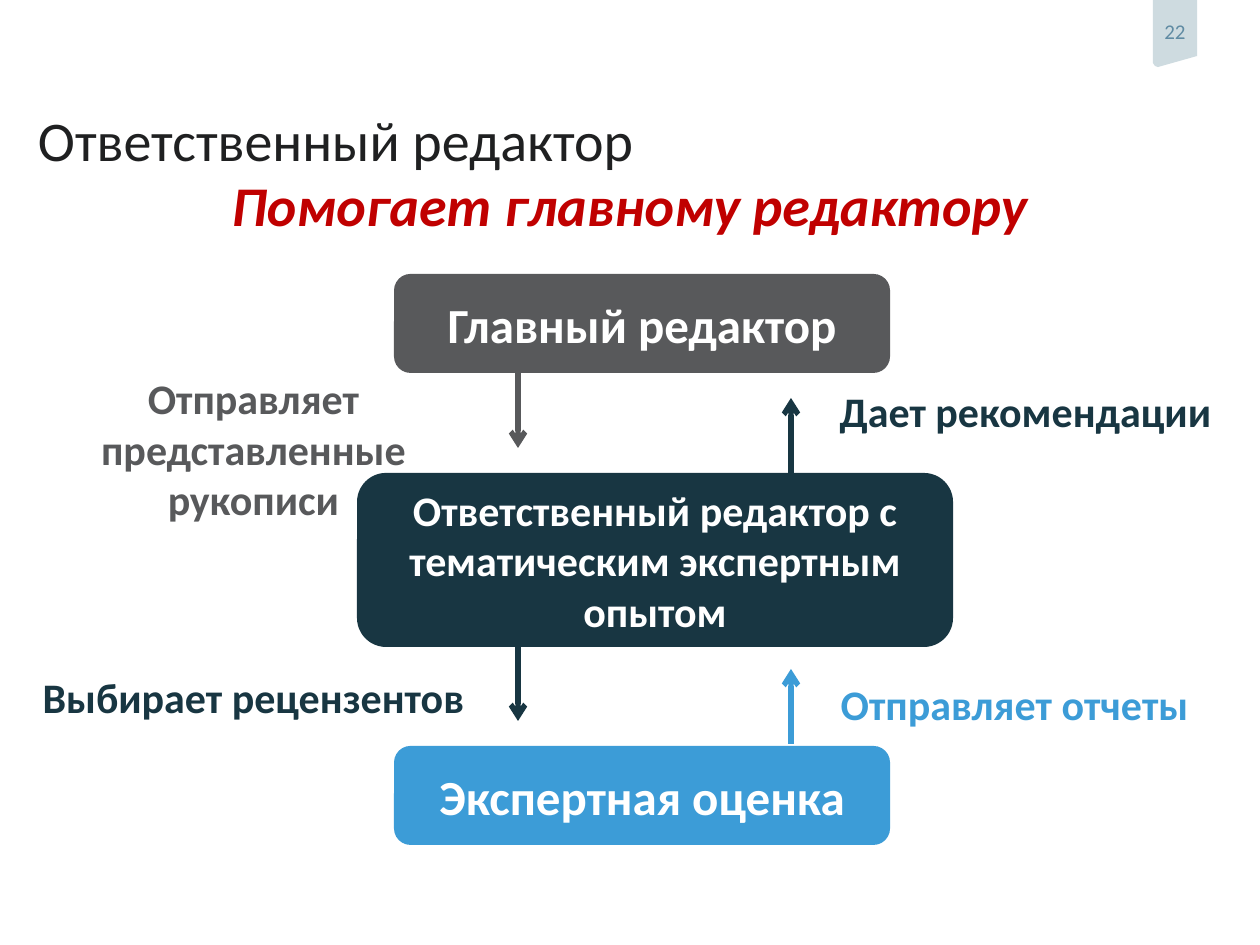
from lxml import etree
from pptx import Presentation
from pptx import util as u
from pptx.dml.color import RGBColor
from pptx.enum import shapes, text
from pptx.oxml.ns import qn

SCALE = 914400 / 126
GREY, NAVY, BLUE = "58595B", "183642", "3C9CD7"


def px(n):
    return u.Emu(round(n * SCALE))


def tint(color, code):
    color.rgb = RGBColor.from_string(code)


def write(shape, words, size, code, bold=True, center=True, middle=False, pad=0):
    frame = shape.text_frame
    frame.text = words
    frame.word_wrap = True
    frame.auto_size = text.MSO_AUTO_SIZE.NONE
    frame.vertical_anchor = text.MSO_ANCHOR.MIDDLE if middle else text.MSO_ANCHOR.TOP
    frame.margin_left = frame.margin_right = px(pad)
    frame.margin_top = frame.margin_bottom = px(pad // 2)
    par = frame.paragraphs[0]
    par.alignment = text.PP_ALIGN.CENTER if center else text.PP_ALIGN.LEFT
    font = par.runs[0].font
    font.name, font.size, font.bold = "Calibri", u.Pt(size), bold
    tint(font.color, code)
    return par


def paint(shape, code):
    shape.shadow.inherit = False
    shape.fill.solid()
    tint(shape.fill.fore_color, code)
    shape.line.fill.background()


def label(slide, words, code, x, y, w, h=74, size=24):
    box = slide.shapes.add_textbox(px(x), px(y), px(w), px(h))
    return write(box, words, size, code)


def node(slide, words, code, x, y, w, h, size):
    box = slide.shapes.add_shape(
        shapes.MSO_SHAPE.ROUNDED_RECTANGLE, px(x), px(y), px(w), px(h))
    paint(box, code)
    write(box, words, size, "FFFFFF", middle=True, pad=12)


def arrow(slide, code, x, start, end):
    line = slide.shapes.add_connector(
        shapes.MSO_CONNECTOR.STRAIGHT, px(x), px(start), px(x), px(end))
    line.line.width = u.Pt(3)
    tint(line.line.color, code)
    etree.SubElement(line.line._get_or_add_ln(), qn("a:tailEnd"), type="arrow")
    etree.SubElement(line._element.spPr, qn("a:effectLst"))


def badge(slide, x, y, w, h):
    """Page number on a ribbon with a slanted lower edge."""
    pen = slide.shapes.build_freeform(x, y, scale=SCALE)
    pen.add_line_segments([(x + w, y), (x + w, y + h - 11), (x + 5, y + h),
                           (x + 2, y + h - 1), (x, y + h - 4)])
    tag = pen.convert_to_shape()
    paint(tag, "CEDBE0")
    write(tag, "22", 12, "608BA3", bold=False, middle=True)
    tag.text_frame.margin_bottom = px(5)
    tag.text_frame.word_wrap = False


def heading(slide, x, y, w):
    title = slide.shapes.title
    title.left, title.top, title.width, title.height = px(x), px(y), px(w), px(60)
    write(title, "Ответственный редактор", 32, "1F2021", bold=False, center=False)
    par = label(slide, "Помогает главному редактору", "C00000", 0, y + 94, 1260, 87, 32)
    par.line_spacing = u.Pt(22)
    par.runs[0].font.italic = True


def flow(slide, x, y):
    """Three roles stacked, with arrows down on the left and up on the right."""
    node(slide, "Главный редактор", GREY, x + 356, y, 496, 99, 28)
    node(slide, "Ответственный редактор с тематическим экспертным опытом",
         NAVY, x + 319, y + 199, 596, 174, 24)
    node(slide, "Экспертная оценка", BLUE, x + 356, y + 472, 496, 99, 28)

    down, up = x + 480, x + 753
    for code, spot, start, end in (
            (GREY, down, 99, 174), (NAVY, down, 373, 447),
            (BLUE, up, 470, 395), (NAVY, up, 199, 124)):
        arrow(slide, code, spot, y + start, y + end)

    for words, code, left, top, wide in (
            ("Отправляет представленные рукописи", GREY, 0, 99, 431),
            ("Выбирает рецензентов", NAVY, 0, 398, 431),
            ("Отправляет отчеты", BLUE, 778, 405, 397),
            ("Дает рекомендации", NAVY, 766, 112, 443)):
        label(slide, words, code, x + left, y + top, wide)


def main():
    deck = Presentation()
    deck.slide_width, deck.slide_height = px(1260), px(945)
    slide = deck.slides.add_slide(deck.slide_layouts[5])
    badge(slide, 1153, 0, 44, 67)
    heading(slide, 38, 105, 1101)
    flow(slide, 38, 274)
    deck.save("out.pptx")


if __name__ == "__main__":
    main()
